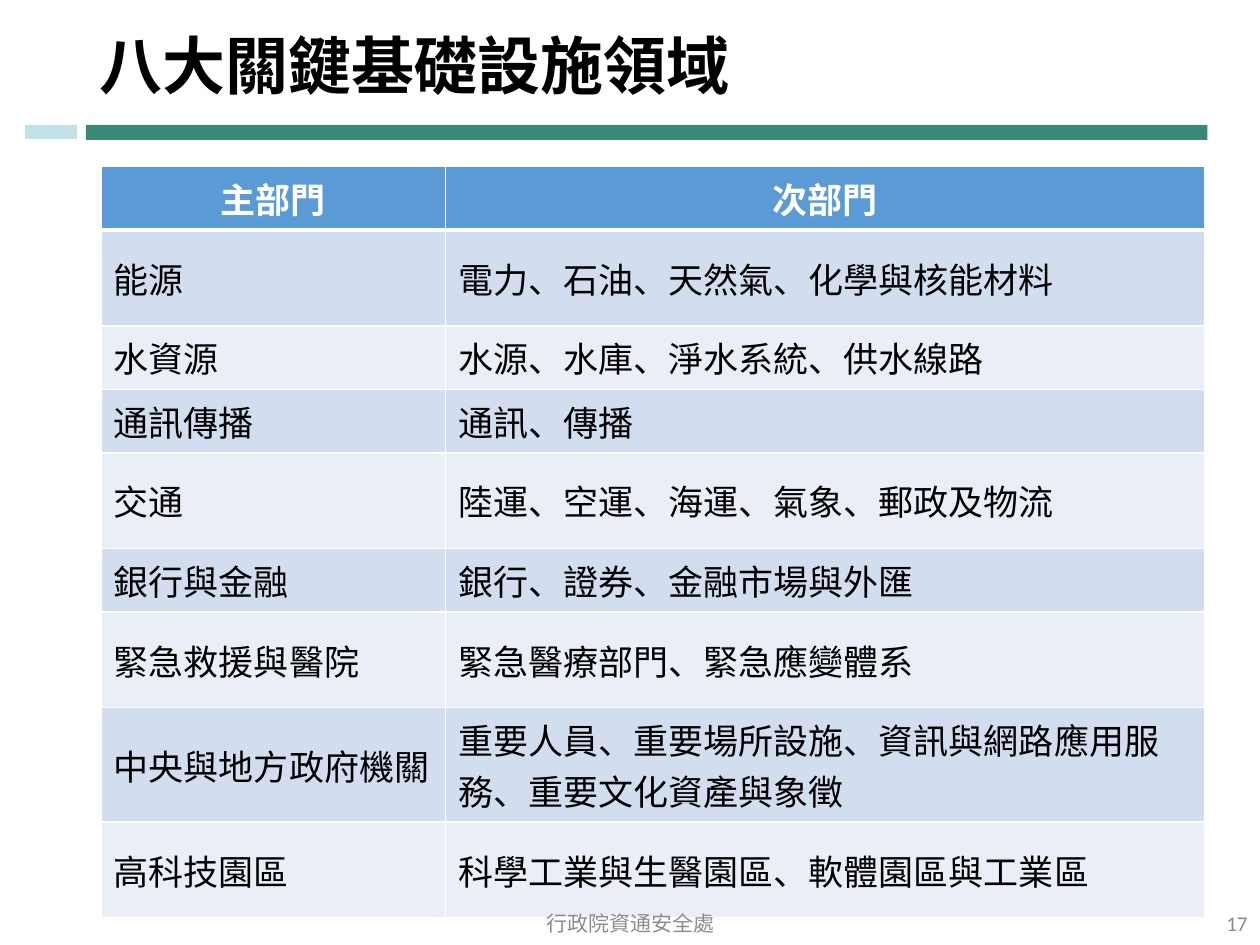
"""Build the slide on the eight critical infrastructure sectors."""
from lxml import etree
from pptx import Presentation
from pptx.dml.color import RGBColor
from pptx.enum.shapes import MSO_SHAPE
from pptx.enum.text import MSO_ANCHOR, PP_ALIGN
from pptx.oxml.ns import qn
from pptx.util import Cm, Pt

RECT = MSO_SHAPE.RECTANGLE
TOP, MIDDLE = MSO_ANCHOR.TOP, MSO_ANCHOR.MIDDLE
LEFT, CENTER, RIGHT = PP_ALIGN.LEFT, PP_ALIGN.CENTER, PP_ALIGN.RIGHT
CJK = "Noto Sans CJK SC"


def rgb(value):
    return RGBColor.from_string(value)


def write(tf, text, size, font, color, align=LEFT, bold=False):
    p = tf.paragraphs[0]
    r = p.add_run()
    r.text = text
    p.alignment = align
    p.font.size, p.font.name, p.font.bold = Pt(size), font, bold
    p.font.color.rgb = rgb(color)
    for props in (p.font._element, r.font._element):
        etree.SubElement(props, qn("a:ea"), typeface=CJK)
    return p


prs = Presentation()
prs.slide_width, prs.slide_height = Cm(25.4), Cm(19.05)
s = prs.slides.add_slide(prs.slide_layouts[6])

bars = [(1.73, 22.61, 0.3, "3A8878", 100), (0.51, 1.04, 0.28, "32A4B4", 30)]
for left, width, height, color, opacity in bars:
    sp = s.shapes.add_shape(RECT, Cm(left), Cm(2.52), Cm(width), Cm(height))
    sp.shadow.inherit = False
    sp.fill.solid()
    sp.fill.fore_color.rgb = rgb(color)
    sp.line.fill.background()
    if opacity < 100:
        clr = sp._element.spPr.find(".//" + qn("a:srgbClr"))
        etree.SubElement(clr, qn("a:alpha"), val=str(opacity * 1000))

sectors = [
    ("主部門", "次部門", 1.17),
    ("能源", "電力、石油、天然氣、化學與核能材料", 1.93),
    ("水資源", "水源、水庫、淨水系統、供水線路", 1.19),
    ("通訊傳播", "通訊、傳播", 1.17),
    ("交通", "陸運、空運、海運、氣象、郵政及物流", 1.93),
    ("銀行與金融", "銀行、證券、金融市場與外匯", 1.19),
    ("緊急救援與醫院", "緊急醫療部門、緊急應變體系", 1.93),
    ("中央與地方政府機關", "重要人員、重要場所設施、資訊與網路應用服務、重要文化資產與象徵", 2.08),
    ("高科技園區", "科學工業與生醫園區、軟體園區與工業區", 1.93),
]
table = s.shapes.add_table(len(sectors), 2, Cm(2.04), Cm(3.36), Cm(22.25), Cm(14.52)).table
table.columns[0].width, table.columns[1].width = Cm(6.94), Cm(15.3)
for i, (main, sub, height) in enumerate(sectors):
    table.rows[i].height = Cm(height)
    header = i == 0
    fill = "5B9BD5" if header else "D2DEEF" if i % 2 else "EAEFF7"
    for j, text in enumerate((main, sub)):
        cell = table.cell(i, j)
        cell.vertical_anchor = TOP if header else MIDDLE
        cell.fill.solid()
        cell.fill.fore_color.rgb = rgb(fill)
        write(cell.text_frame, text, 20, CJK, "FFFFFF" if header else "000000",
              CENTER if header else LEFT, header)
        tcPr = cell._tc.get_or_add_tcPr()
        for k, side in enumerate(("lnL", "lnR", "lnT", "lnB")):
            thick = (header and side == "lnB") or (i == 1 and side == "lnT")
            ln = etree.Element(qn("a:" + side), w=str(Pt(3 if thick else 1)))
            solid = etree.SubElement(ln, qn("a:solidFill"))
            etree.SubElement(solid, qn("a:srgbClr"), val="FFFFFF")
            tcPr.insert(k, ln)

labels = [
    ("八大關鍵基礎設施領域", 1.75, 0.38, 21.89, 2.03, 36, CJK, "000000", LEFT, True),
    ("行政院資通安全處", 8.41, 18.24, 8.59, 0.74, 12, "Calibri", "8C8C8C", CENTER, False),
    ("17", 19.69, 18.24, 5.71, 0.74, 12, "Calibri", "8C8C8C", RIGHT, False),
]
for text, left, top, width, height, size, font, color, align, bold in labels:
    tf = s.shapes.add_textbox(Cm(left), Cm(top), Cm(width), Cm(height)).text_frame
    tf.word_wrap = True
    tf.vertical_anchor = MIDDLE
    p = write(tf, text, size, font, color, align, bold)
    if bold:
        p.line_spacing = 0.9

prs.save("out.pptx")
